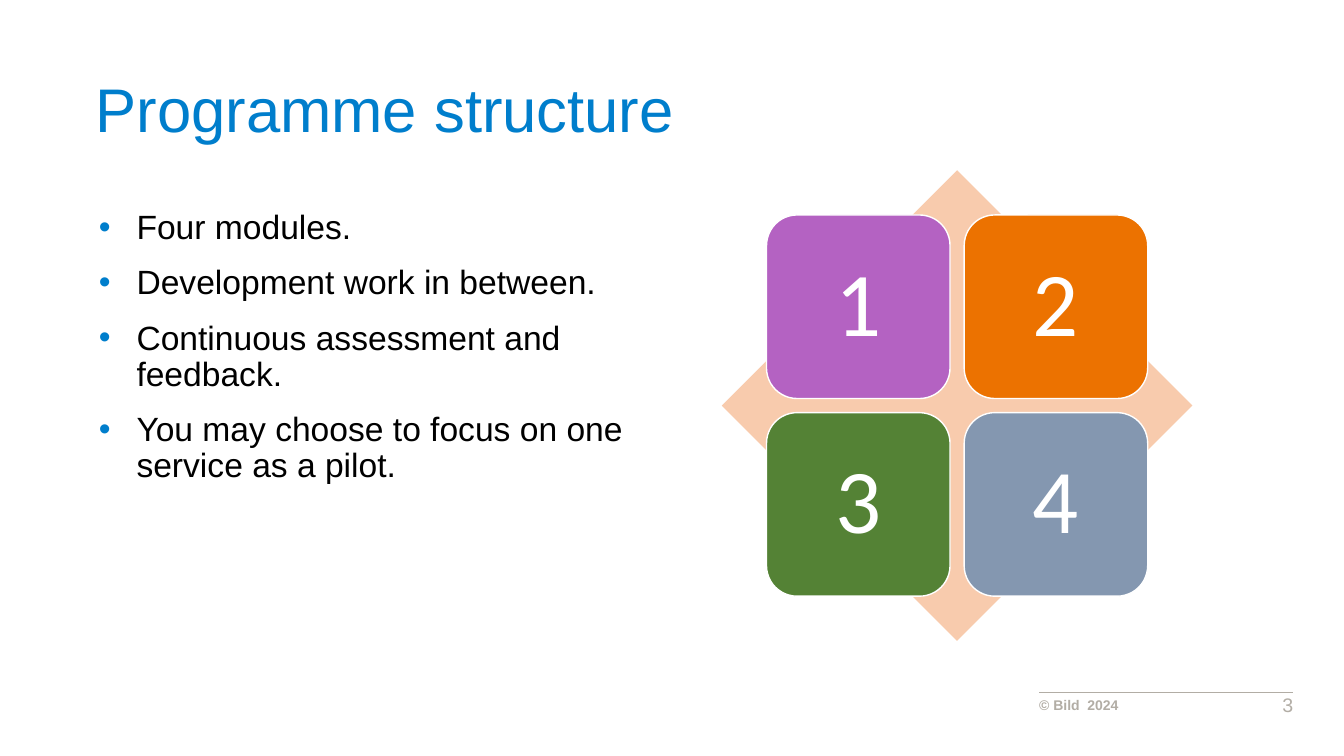
from dataclasses import dataclass

from lxml import etree
from pptx import Presentation
from pptx import util as u
from pptx.dml.color import RGBColor
from pptx.enum import shapes, text
from pptx.oxml import ns


@dataclass(frozen=True)
class Theme:
    """Colours, fonts and type sizes of the slide."""
    blue: str = "007ECC"
    black: str = "000000"
    white: str = "FFFFFF"
    grey: str = "B2ADA5"
    peach: str = "F8CBAD"
    tiles: tuple = ("B462C2", "EC7200", "548235", "8497B0")
    font: str = "Arial"
    tile_font: str = "Calibri"
    title: int = 44
    body: int = 24
    tile: int = 65
    copyright: int = 10
    number: int = 14


THEME = Theme()
BULLETS = (
    "Four modules.",
    "Development work in between.",
    "Continuous assessment and feedback.",
    "You may choose to focus on one service as a pilot.",
)


def add_run(p, words, size, color, font=THEME.font, bold=False):
    """Add one formatted run to a paragraph."""
    r = p.add_run()
    r.text = words
    r.font.size = u.Pt(size)
    r.font.name = font
    r.font.bold = bold
    r.font.color.rgb = RGBColor.from_string(color)


def place(sp, box):
    """Move a shape to a box of left, top, width and height in centimetres."""
    sp.left, sp.top, sp.width, sp.height = (u.Cm(v) for v in box)


def set_frame(tf, inset=0, anchor=text.MSO_ANCHOR.TOP):
    """Set wrapping, margins and anchor of a text frame."""
    tf.word_wrap = True
    tf.auto_size = text.MSO_AUTO_SIZE.NONE
    tf.vertical_anchor = anchor
    tf.margin_left = tf.margin_right = u.Cm(inset)
    tf.margin_top = tf.margin_bottom = u.Cm(inset)


def add_bullet(p, color, indent):
    """Give a paragraph a coloured bullet with a hanging indent."""
    pPr = p._p.get_or_add_pPr()
    pPr.set("marL", str(u.Cm(indent)))
    pPr.set("indent", str(-u.Cm(indent)))
    clr = etree.SubElement(pPr, ns.qn("a:buClr"))
    etree.SubElement(clr, ns.qn("a:srgbClr"), val=color)
    etree.SubElement(pPr, ns.qn("a:buFont"), typeface=THEME.font)
    etree.SubElement(pPr, ns.qn("a:buChar"), char="•")


def fill_title(s, box):
    """Place and write the title."""
    sp = s.shapes.title
    place(sp, box)
    set_frame(sp.text_frame)
    p = sp.text_frame.paragraphs[0]
    p.alignment = text.PP_ALIGN.LEFT
    p.line_spacing = u.Pt(42)
    add_run(p, "Programme structure", THEME.title, THEME.blue)


def fill_body(s, box):
    """Place and write the bulleted list."""
    sp = s.placeholders[1]
    place(sp, box)
    tf = sp.text_frame
    set_frame(tf)
    tf.margin_left = tf.margin_right = u.Cm(0.25)
    tf.margin_top = tf.margin_bottom = u.Cm(0.13)
    for i, words in enumerate(BULLETS):
        p = tf.add_paragraph() if i else tf.paragraphs[0]
        add_bullet(p, THEME.blue, 0.95)
        p.line_spacing = 0.9
        p.space_before = u.Pt(7.5 if i else 0)
        p.space_after = u.Pt(6)
        add_run(p, words, THEME.body, THEME.black)


def add_matrix(s, left, top, size):
    """Draw the diamond with four numbered tiles inside a square."""
    diamond = s.shapes.add_shape(
        shapes.MSO_SHAPE.DIAMOND, *(u.Cm(v) for v in (left, top, size, size)))
    diamond.shadow.inherit = False
    diamond.fill.solid()
    diamond.fill.fore_color.rgb = RGBColor.from_string(THEME.peach)
    diamond.line.fill.background()
    margin, side, pitch = 0.095 * size, 0.39 * size, 0.42 * size
    for i, color in enumerate(THEME.tiles):
        row, col = divmod(i, 2)
        box = (left + margin + col * pitch, top + margin + row * pitch, side, side)
        tile = s.shapes.add_shape(
            shapes.MSO_SHAPE.ROUNDED_RECTANGLE, *(u.Cm(v) for v in box))
        tile.shadow.inherit = False
        tile.fill.solid()
        tile.fill.fore_color.rgb = RGBColor.from_string(color)
        tile.line.color.rgb = RGBColor.from_string(THEME.white)
        tile.line.width = u.Pt(1)
        set_frame(tile.text_frame, 0.69, text.MSO_ANCHOR.MIDDLE)
        p = tile.text_frame.paragraphs[0]
        p.alignment = text.PP_ALIGN.CENTER
        p.line_spacing = 0.9
        add_run(p, str(i + 1), THEME.tile, THEME.white, THEME.tile_font)


def add_footer(s, left, top, width):
    """Draw the footer rule, copyright line and slide number."""
    rule = s.shapes.add_connector(
        shapes.MSO_CONNECTOR.STRAIGHT,
        u.Cm(left), u.Cm(top), u.Cm(left + width), u.Cm(top))
    rule.line.color.rgb = RGBColor.from_string(THEME.grey)
    rule.line.width = u.Pt(0.5)
    etree.SubElement(rule._element.spPr, ns.qn("a:effectLst"))
    labels = (
        ("© Bild  2024", (left, top + 0.1, 4.47, 0.43),
         text.PP_ALIGN.LEFT, THEME.copyright, True),
        ("3", (left + width - 1, top, 1, 0.6),
         text.PP_ALIGN.RIGHT, THEME.number, False),
    )
    for words, box, align, size, bold in labels:
        sp = s.shapes.add_textbox(*(u.Cm(v) for v in box))
        set_frame(sp.text_frame)
        p = sp.text_frame.paragraphs[0]
        p.alignment = align
        add_run(p, words, size, THEME.grey, bold=bold)


def main():
    """Build and save the slide."""
    prs = Presentation()
    prs.slide_width, prs.slide_height = u.Cm(33.87), u.Cm(19.05)
    s = prs.slides.add_slide(prs.slide_layouts[1])
    add_footer(s, 26.19, 17.45, 6.4)
    fill_body(s, (2.24, 5.18, 14.4, 12.1))
    fill_title(s, (2.41, 2.16, 29.2, 3.33))
    add_matrix(s, 18.19, 4.29, 11.86)
    prs.save("out.pptx")


if __name__ == "__main__":
    main()
